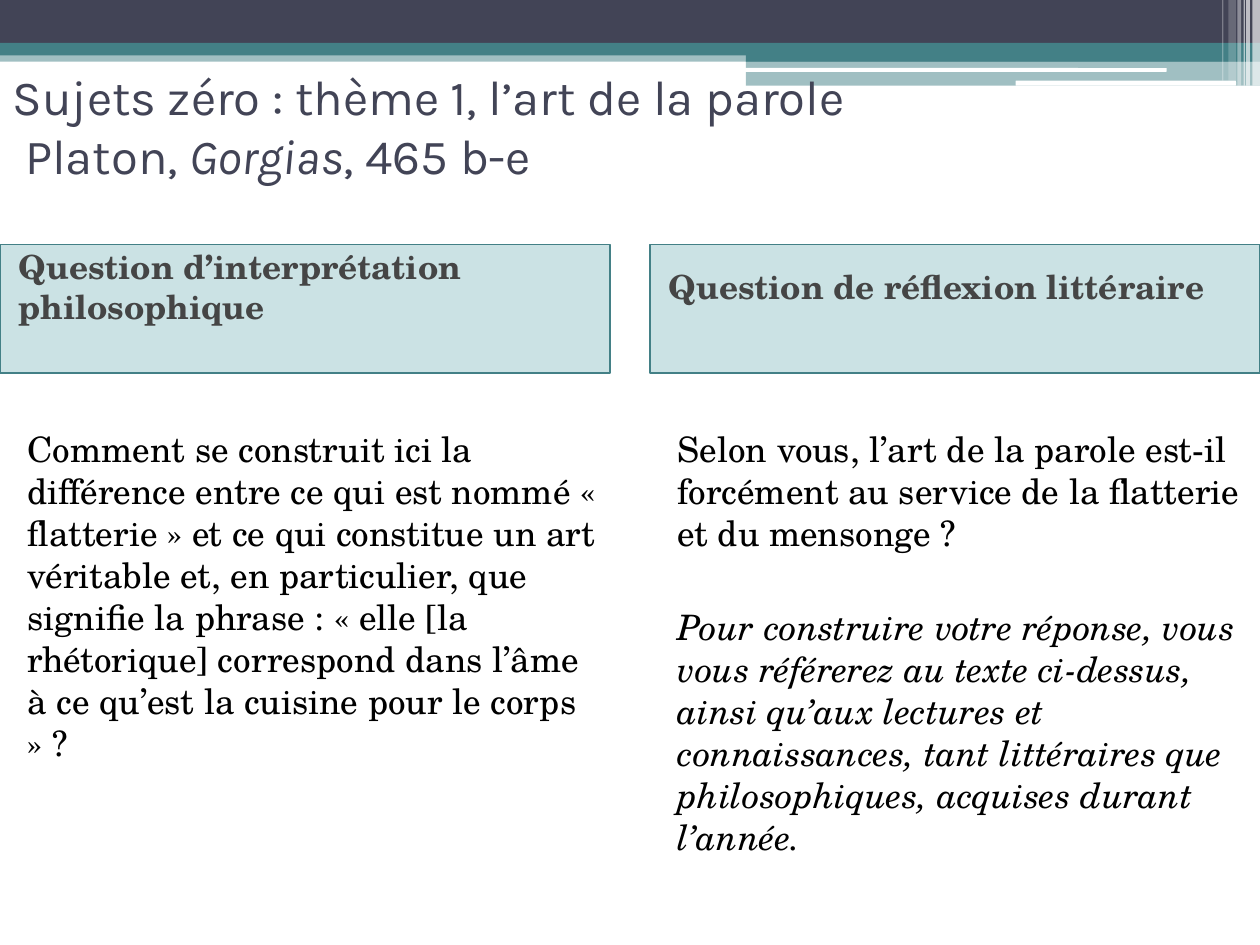
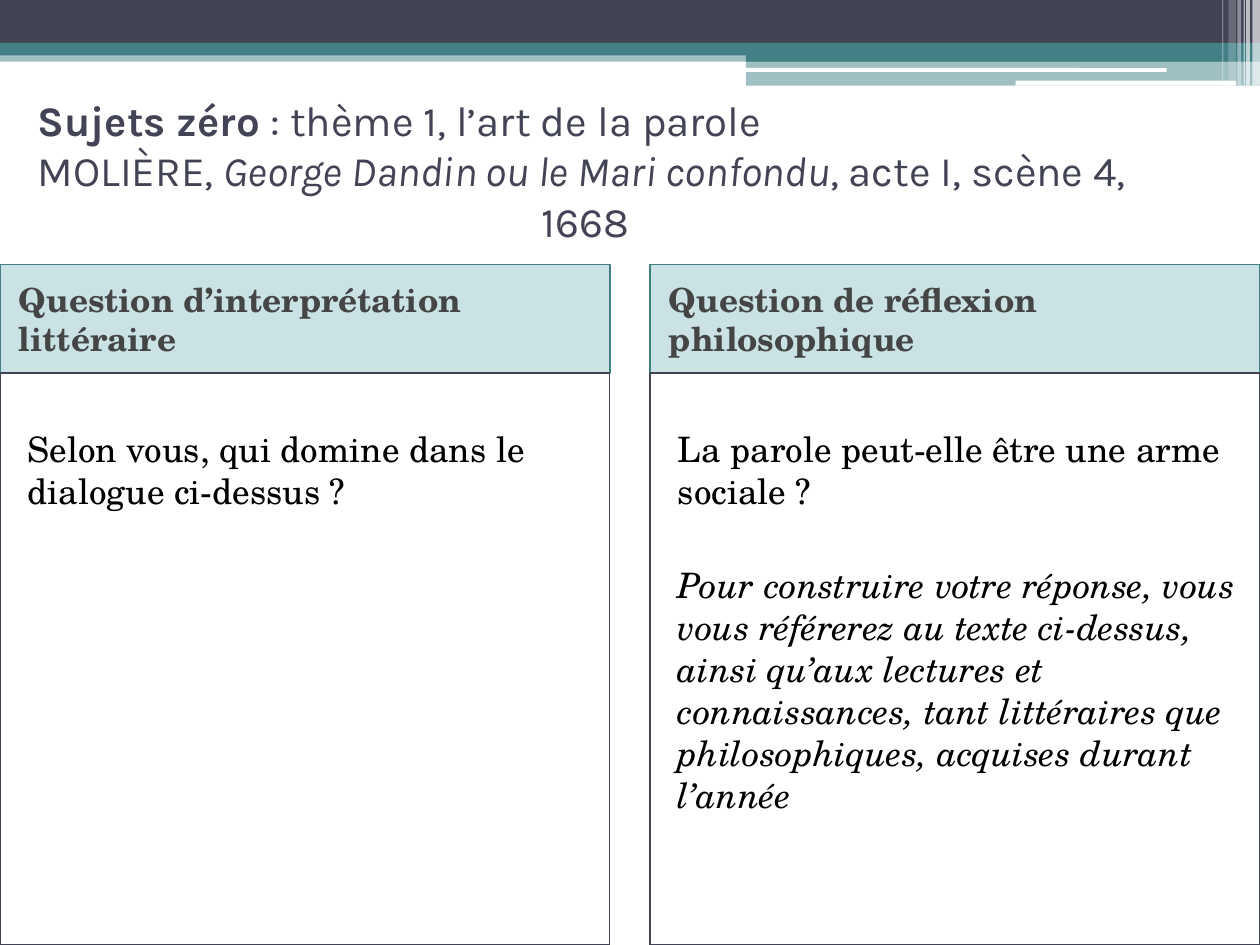
import lxml.etree
import pptx
import pptx.dml.color
import pptx.enum.shapes
import pptx.enum.text
import pptx.oxml.ns
import pptx.util

Inches = pptx.util.Inches
Pt = pptx.util.Pt
RGBColor = pptx.dml.color.RGBColor
SHAPE = pptx.enum.shapes.MSO_SHAPE
ANCHOR = pptx.enum.text.MSO_ANCHOR
qn = pptx.oxml.ns.qn

NAVY = RGBColor(0x42, 0x44, 0x56)
TEAL = RGBColor(0x43, 0x80, 0x86)
TINT = RGBColor(0x32, 0x8E, 0x97)
GREY = RGBColor(0x45, 0x45, 0x45)
BLACK = RGBColor(0, 0, 0)
WHITE = RGBColor(0xFF, 0xFF, 0xFF)

HEADING_FONT = "Karla"
BODY_FONT = "TeX Gyre Schola"
HEADER = {"name": BODY_FONT, "size": Pt(19), "bold": True, "color": GREY}
BODY = {"name": BODY_FONT, "size": Pt(20), "color": BLACK}
ITALIC = {"italic": True}

COLUMNS = (0, 5.16)
COLUMN_WIDTH = 4.84
BODY_TOP = 2.96

BANDS = [
    (0, 0.4, 10, 0.09, TEAL, 50),
    (0, 0, 10, 0.34, NAVY, 100),
    (0, 0.34, 10, 0.1, TEAL, 100),
    (5.92, 0.39, 4.08, 0.1, TEAL, 100),
    (5.92, 0.48, 4.08, 0.2, TEAL, 50),
]
SLITS = [(5.91, 0.54, 3.35, 0.03), (8.06, 0.64, 1.75, 0.04)]
STRIPES = [
    (9.94, 0.06, 0.68, 65),
    (9.89, 0.03, 0.68, 65),
    (9.87, 0.01, 0.68, 60),
    (9.82, 0.03, 0.68, 40),
    (9.75, 0.06, 0.64, 20),
    (9.7, 0.01, 0.64, 30),
]

ADVICE = ("Pour construire votre réponse, vous vous référerez au texte ci-dessus, "
          "ainsi qu’aux lectures et connaissances, tant littéraires que "
          "philosophiques, acquises durant l’année")


class Deck:
    def __init__(self):
        self.prs = pptx.Presentation()
        self.prs.slide_width = Inches(10)
        self.prs.slide_height = Inches(7.5)
        self.s = None

    def new_slide(self):
        self.s = self.prs.slides.add_slide(self.prs.slide_layouts[5])
        for x, y, w, h, color, alpha in BANDS:
            self.shape((x, y, w, h), color, alpha)
        for box in SLITS:
            self.shape(box, WHITE, kind=SHAPE.ROUNDED_RECTANGLE)
        for x, w, h, alpha in STRIPES:
            self.shape((x, 0, w, h), WHITE, alpha)

    def shape(self, box, fill=None, alpha=100, line=None, width=1,
              kind=SHAPE.RECTANGLE):
        sp = self.s.shapes.add_shape(kind, *map(Inches, box))
        sp.shadow.inherit = False
        if fill is None:
            sp.fill.background()
        else:
            sp.fill.solid()
            sp.fill.fore_color.rgb = fill
            if alpha < 100:
                clr = sp.element.spPr.find(".//" + qn("a:srgbClr"))
                lxml.etree.SubElement(clr, qn("a:alpha"), val=str(alpha * 1000))
        if line is None:
            sp.line.fill.background()
        else:
            sp.line.color.rgb = line
            sp.line.width = Pt(width)
        return sp

    def text(self, sp, paragraphs, style, anchor, left=0.1, top=0.05,
             bottom=0.05, gap=0):
        tf = sp.text_frame
        frame = {"word_wrap": True, "auto_size": pptx.enum.text.MSO_AUTO_SIZE.NONE,
                 "vertical_anchor": anchor, "margin_left": Inches(left),
                 "margin_right": Inches(0.1), "margin_top": Inches(top),
                 "margin_bottom": Inches(bottom)}
        for key, value in frame.items():
            setattr(tf, key, value)
        for i, (indent, runs) in enumerate(paragraphs):
            p = tf.add_paragraph() if i else tf.paragraphs[0]
            p.alignment = pptx.enum.text.PP_ALIGN.LEFT
            p.space_before = Pt(gap if i else 0)
            if indent:
                pPr = p._p.get_or_add_pPr()
                pPr.set("marL", str(Inches(indent)))
                pPr.set("indent", "0")
            for words, extra in runs:
                r = p.add_run()
                r.text = words
                for key, value in {**style, **extra}.items():
                    if key == "color":
                        r.font.color.rgb = value
                    else:
                        setattr(r.font, key, value)

    def title(self, box, size, paragraphs):
        sp = self.s.shapes.title
        self.s.shapes.element.append(sp.element)
        for key, value in zip(("left", "top", "width", "height"), box):
            setattr(sp, key, Inches(value))
        style = {"name": HEADING_FONT, "size": Pt(size), "color": NAVY}
        self.text(sp, paragraphs, style, ANCHOR.MIDDLE)

    def headers(self, top, headings, bottom=0.05):
        for x, heading in zip(COLUMNS, headings):
            box = (x, top, COLUMN_WIDTH, BODY_TOP - top)
            sp = self.shape(box, TINT, 25, TEAL)
            self.text(sp, [(0, [(heading, {})])], HEADER, ANCHOR.MIDDLE,
                      left=0.15, bottom=bottom)

    def bodies(self, columns, line=None):
        for x, paragraphs in zip(COLUMNS, columns):
            box = (x, BODY_TOP, COLUMN_WIDTH, 7.5 - BODY_TOP)
            sp = self.shape(box, line=line, width=0.75)
            self.text(sp, [(0, [run]) for run in paragraphs], BODY, ANCHOR.TOP,
                      left=0.22, top=0.43, gap=30)


def main():
    deck = Deck()

    deck.new_slide()
    deck.title((0, 0.21, 10, 1.57), 28, [
        (0, [("Sujets zéro : thème 1, l’art de la parole", {})]),
        (0.1, [("Platon, ", {}), ("Gorgias", ITALIC), (", 465 b-e", {})]),
    ])
    deck.headers(1.94, ["Question d’interprétation philosophique",
                        "Question de réflexion littéraire"], bottom=0.41)
    deck.bodies([
        [("Comment se construit ici la différence entre ce qui est nommé "
          "« flatterie » et ce qui constitue un art véritable et, en particulier, "
          "que signifie la phrase : « elle [la rhétorique] correspond dans l’âme "
          "à ce qu’est la cuisine pour le corps » ?", {})],
        [("Selon vous, l’art de la parole est-il forcément au service de la "
          "flatterie et du mensonge ?", {}), (ADVICE + ".", ITALIC)],
    ])

    deck.new_slide()
    deck.title((0.2, 0.6, 9.58, 1.5), 24, [
        (0, [("Sujets zéro ", {"bold": True}),
             (": thème 1, l’art de la parole", {})]),
        (0, [("MOLIÈRE, ", {}), ("George Dandin ou le Mari confondu", ITALIC),
             (", acte I, scène 4,", {})]),
        (4, [("1668", {})]),
    ])
    deck.headers(2.1, ["Question d’interprétation littéraire",
                       "Question de réflexion philosophique"])
    deck.bodies([
        [("Selon vous, qui domine dans le dialogue ci-dessus ?", {})],
        [("La parole peut-elle être une arme sociale ?", {}), (ADVICE, ITALIC)],
    ], line=NAVY)

    deck.prs.save("out.pptx")


if __name__ == "__main__":
    main()
